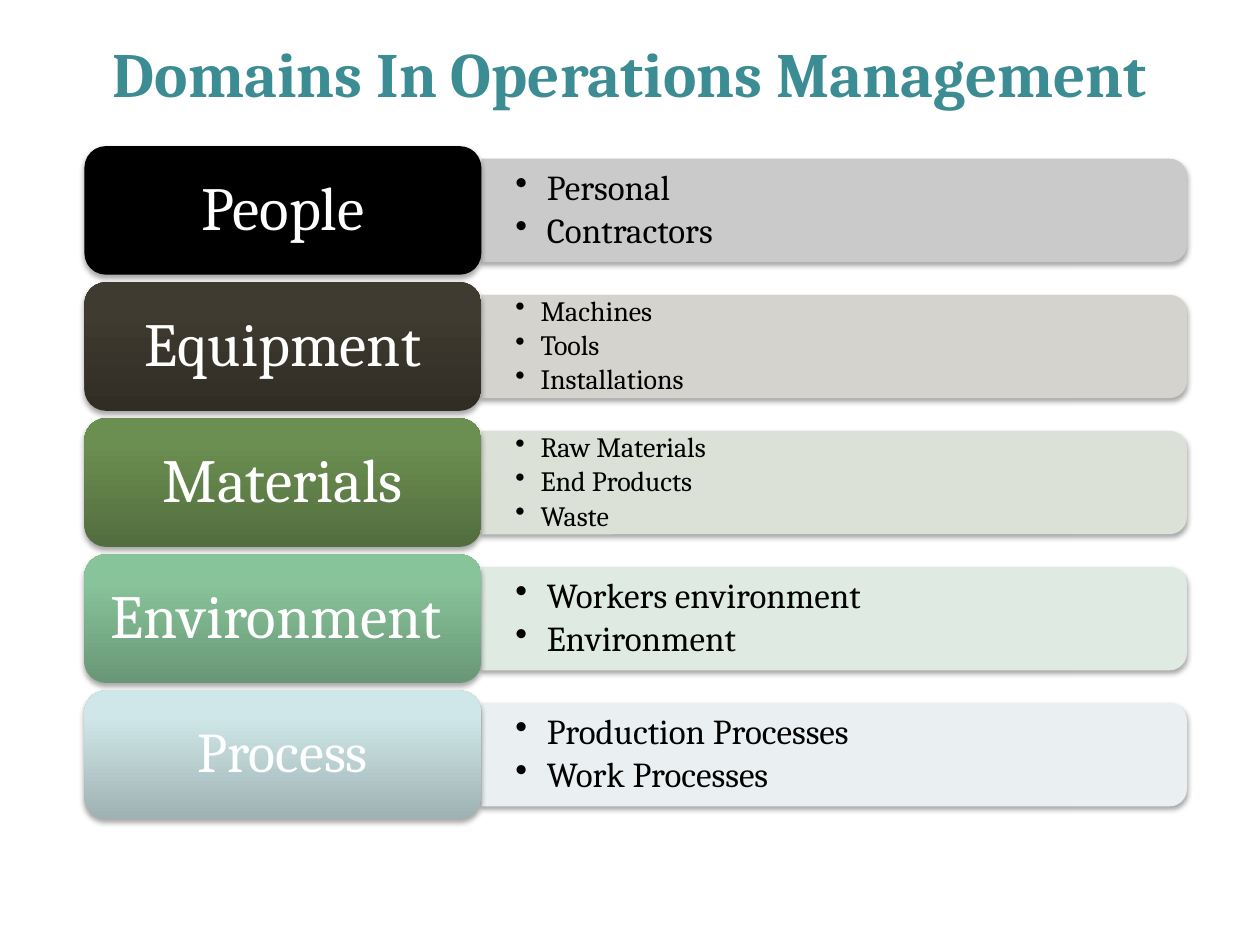
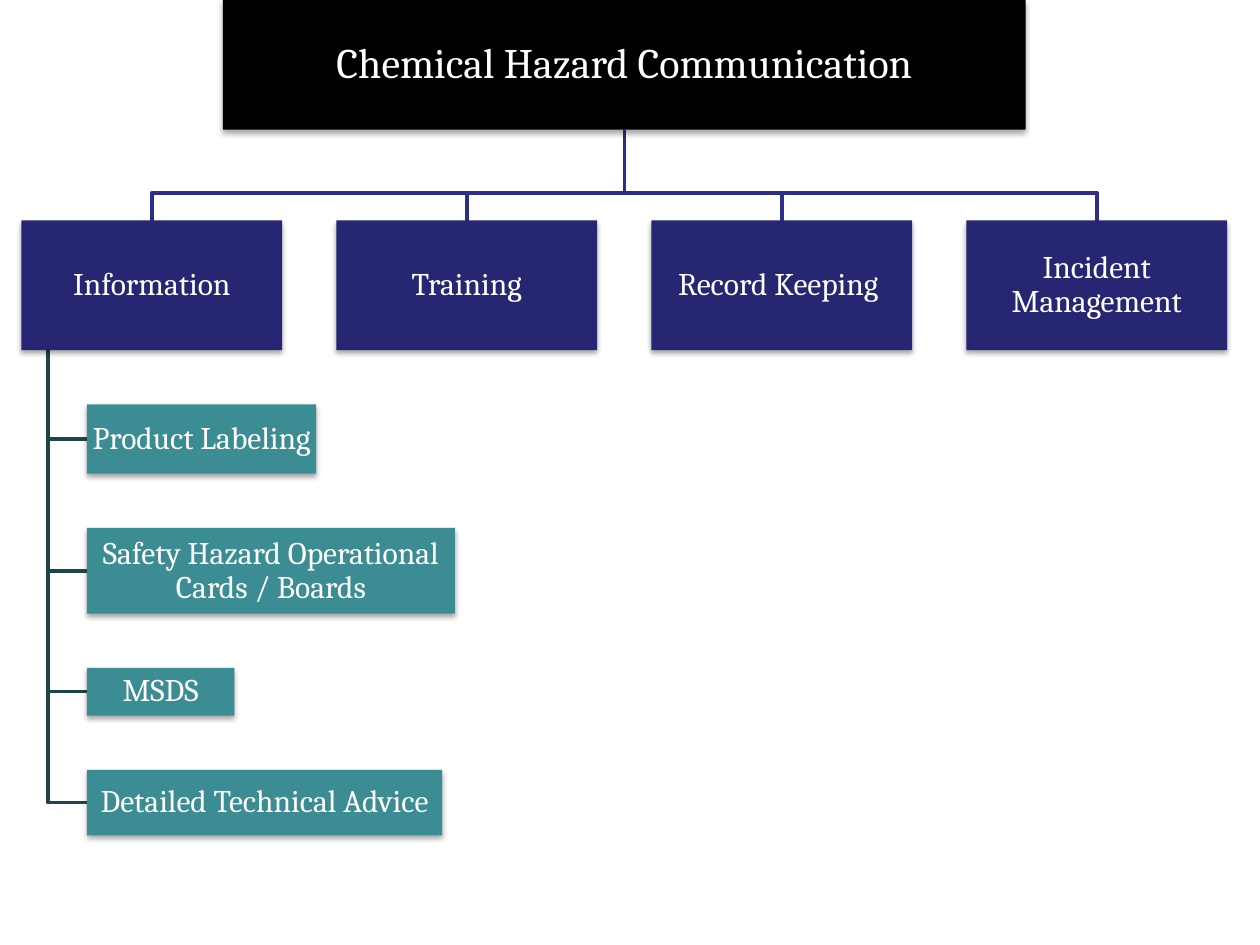
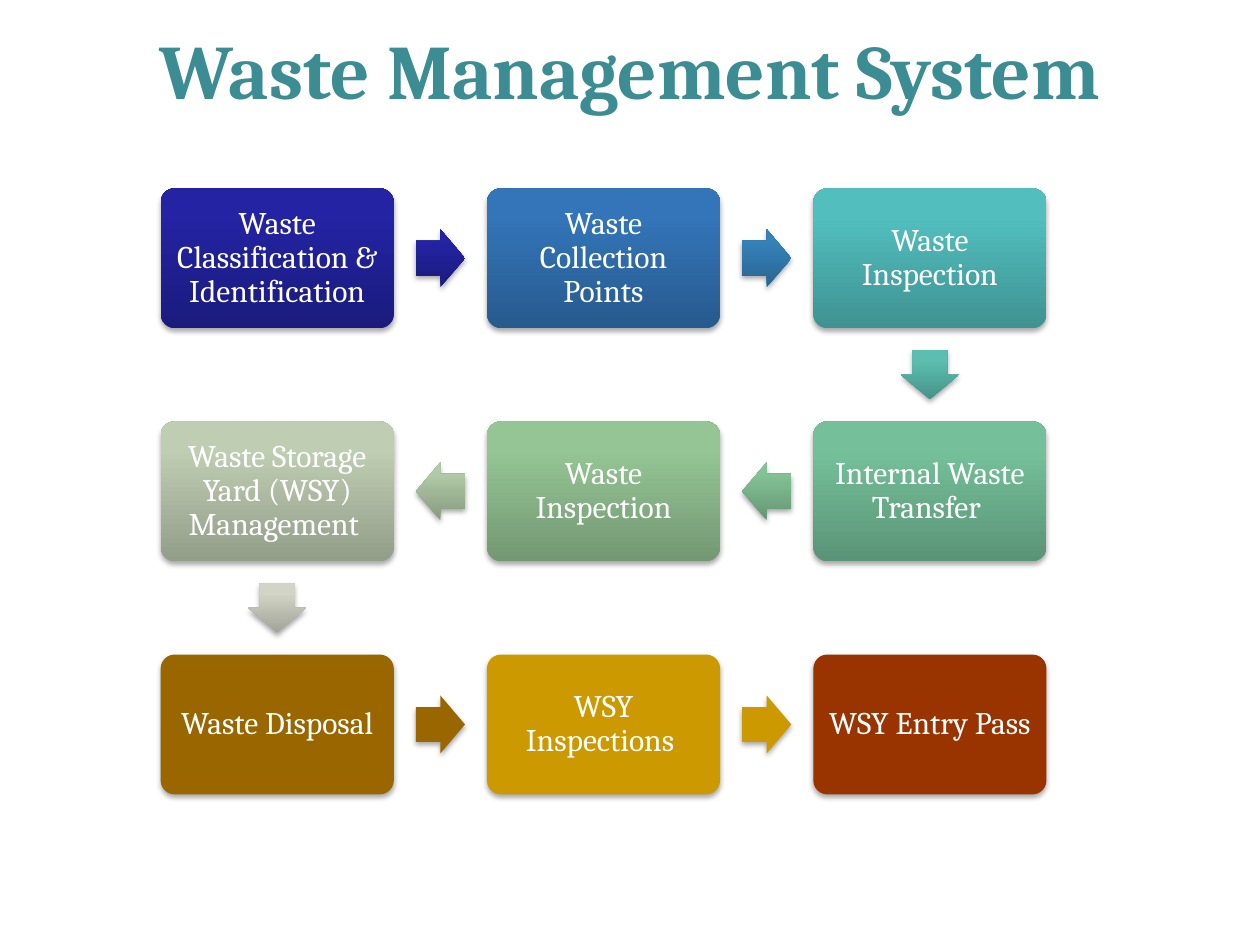
from lxml import etree
from pptx import Presentation
from pptx.dml.color import RGBColor
from pptx.enum.shapes import MSO_SHAPE
from pptx.enum.text import MSO_ANCHOR, PP_ALIGN
from pptx.oxml.ns import qn
from pptx.util import Inches, Pt

RECTANGLE = MSO_SHAPE.RECTANGLE
ROUNDED = MSO_SHAPE.ROUNDED_RECTANGLE
TOP_ROUNDED = MSO_SHAPE.ROUND_2_SAME_RECTANGLE
RIGHT_ARROW = MSO_SHAPE.RIGHT_ARROW
LEFT_ARROW = MSO_SHAPE.LEFT_ARROW
DOWN_ARROW = MSO_SHAPE.DOWN_ARROW
MIDDLE = MSO_ANCHOR.MIDDLE
LEFT, CENTER = PP_ALIGN.LEFT, PP_ALIGN.CENTER

FONT = "Cambria"
LINE_SPACING = 0.9
SHADE = 0.77  # darkness of the lower end of a gradient

COLORS = {
    "title": "3C8C93", "black": "000000", "white": "FFFFFF",
    "equipment": "403B30", "materials": "6B8E51",
    "environment": "88C49A", "process": "CFE7E9",
    "people panel": "CACACA", "equipment panel": "D5D3CE",
    "materials panel": "DBE1D6", "environment panel": "DFEAE2",
    "process panel": "EAF0F1",
    "branch": "262673", "branch line": "2D2D8A",
    "leaf": "3C8C93", "leaf line": "1E4649",
    "classification": "2323A3", "collection": "3375B8",
    "collection arrow": "3582BB", "inspection": "52BEBE",
    "inspection arrow": "5CBEB0", "transfer": "75C09A",
    "transfer arrow": "83C295", "second inspection": "95C595",
    "second inspection arrow": "B0C9A6", "storage": "BFCDB2",
    "storage arrow": "D2D5C5", "disposal": "996600",
    "yard inspections": "CC9900", "entry pass": "993300",
}

# Label, label size, colour, bullet size, bullets
DOMAINS = [
    ("People", 35, "black", 20, ["Personal", "Contractors"]),
    ("Equipment", 35, "equipment", 16, ["Machines", "Tools", "Installations"]),
    ("Materials", 35, "materials", 16, ["Raw Materials", "End Products", "Waste"]),
    ("Environment ", 35, "environment", 20, ["Workers environment", "Environment"]),
    ("Process", 32, "process", 20, ["Production Processes", "Work Processes"]),
]

BRANCHES = ["Information", "Training", "Record Keeping ", "Incident Management"]

# Text, width, height
LEAVES = [
    ("Product Labeling", 1.82, 0.55),
    ("Safety Hazard Operational Cards / Boards", 2.92, 0.68),
    ("MSDS", 1.17, 0.38),
    ("Detailed Technical Advice", 2.82, 0.52),
]

# Text, box colour, colour of the arrow to the next step
WASTE_STEPS = [
    ("Waste Classification & Identification", "classification", "classification"),
    ("Waste Collection Points", "collection", "collection arrow"),
    ("Waste Inspection", "inspection", "inspection arrow"),
    ("Internal Waste Transfer ", "transfer", "transfer arrow"),
    ("Waste Inspection", "second inspection", "second inspection arrow"),
    ("Waste Storage Yard (WSY) Management ", "storage", "storage arrow"),
    ("Waste Disposal", "disposal", "disposal"),
    ("WSY Inspections ", "yard inspections", "yard inspections"),
    ("WSY Entry Pass", "entry pass", None),
]
FLAT_STEPS = {"black", "disposal", "yard inspections", "entry pass"}


def color(name):
    return RGBColor.from_string(COLORS[name])


def paint(shape, name, gradient=False):
    """Fill a shape flat, or from a darker foot up to its colour."""
    if not gradient:
        shape.fill.solid()
        shape.fill.fore_color.rgb = color(name)
        return
    light = color(name)
    shape.fill.gradient()
    shape.fill.gradient_angle = 90
    foot, body = shape.fill.gradient_stops
    foot.position, body.position = 0, 0.8
    foot.color.rgb = RGBColor(*(round(part * SHADE) for part in light))
    body.color.rgb = light


def add_shadow(shape):
    shape.shadow.inherit = False
    effects = shape._element.spPr.find(qn("a:effectLst"))
    shadow = etree.SubElement(
        effects, qn("a:outerShdw"), blurRad=str(Pt(3.1)), dist=str(Pt(1.8)),
        dir="5400000", rotWithShape="0")
    black = etree.SubElement(shadow, qn("a:srgbClr"), val=COLORS["black"])
    etree.SubElement(black, qn("a:alpha"), val="35000")


def set_frame(shape, inset_x, inset_y):
    frame = shape.text_frame
    frame.word_wrap = True
    frame.vertical_anchor = MIDDLE
    frame.margin_left = frame.margin_right = Inches(inset_x)
    frame.margin_top = frame.margin_bottom = Inches(inset_y)
    return frame


def style_paragraph(paragraph, text, size, color_name, align=CENTER):
    paragraph.text = text
    paragraph.alignment = align
    paragraph.font.name = FONT
    paragraph.font.size = Pt(size)
    paragraph.font.color.rgb = color(color_name)


def add_block(slide, kind, left, top, width, height, fill, gradient=False):
    shape = slide.shapes.add_shape(
        kind, Inches(left), Inches(top), Inches(width), Inches(height))
    paint(shape, fill, gradient)
    shape.line.fill.background()
    add_shadow(shape)
    return shape


def add_label(shape, text, size, inset_x, inset_y):
    paragraph = set_frame(shape, inset_x, inset_y).paragraphs[0]
    style_paragraph(paragraph, text, size, "white")
    paragraph.line_spacing = LINE_SPACING


def add_title(slide, text, size, top, height):
    box = slide.shapes.add_textbox(
        Inches(0.75), Inches(top), Inches(8.5), Inches(height))
    paragraph = set_frame(box, 0.1, 0.05).paragraphs[0]
    style_paragraph(paragraph, text, size, "title")
    paragraph.font.bold = True


def add_bullets(slide, left, top, width, height, items, size):
    box = slide.shapes.add_textbox(
        Inches(left), Inches(top), Inches(width), Inches(height))
    frame = set_frame(box, 0.27, 0.14)
    indent = Pt(size * 0.9)
    for index, item in enumerate(items):
        paragraph = frame.add_paragraph() if index else frame.paragraphs[0]
        properties = paragraph._p.get_or_add_pPr()
        properties.set("marL", str(indent))
        properties.set("indent", str(-indent))
        etree.SubElement(properties, qn("a:buChar"), char="•")
        style_paragraph(paragraph, item, size, "black", LEFT)
        paragraph.line_spacing = LINE_SPACING
        if index:
            paragraph.space_before = Pt(size * 0.15)


def add_elbow(slide, points, line_color):
    corners = [(Inches(x), Inches(y)) for x, y in points]
    builder = slide.shapes.build_freeform(*corners[0])
    builder.add_line_segments(corners[1:], close=False)
    line = builder.convert_to_shape()
    line.fill.background()
    line.line.color.rgb = color(line_color)
    line.line.width = Pt(2)
    line.shadow.inherit = False


def build_domains(slide):
    add_title(slide, "Domains In Operations Management", 36, 0.25, 0.65)
    left, width, height, pitch = 0.67, 3.15, 1.02, 1.08
    panel_left, panel_width, panel_height = left + width, 5.6, 0.82
    for row, (name, size, fill, bullet_size, items) in enumerate(DOMAINS):
        top = 1.16 + row * pitch
        middle = top + height / 2
        # Panel: an upright shape turned so that its round corners face right
        panel = add_block(
            slide, TOP_ROUNDED,
            panel_left + (panel_width - panel_height) / 2,
            middle - panel_width / 2, panel_height, panel_width,
            f"{name.strip().lower()} panel")
        panel.rotation = 90
        add_bullets(slide, panel_left, middle - 0.37, 5.56, 0.74,
                    items, bullet_size)
        # Label
        label = add_block(slide, ROUNDED, left, top, width, height, fill,
                          fill not in FLAT_STEPS)
        add_label(label, name, size, 0.15, 0.07)


def build_hazard_tree(slide):
    root_left, root_width, box_height = 1.77, 6.37, 1.03
    root_center = root_left + root_width / 2
    branch_top, branch_width, bus_y = 1.75, 2.07, 1.53
    branch_lefts = [0.17 + 2.5 * index for index in range(len(BRANCHES))]
    branch_bottom = branch_top + box_height
    trunk_x, leaf_left, leaf_gap = 0.38, 0.69, 0.43

    # Leaves, each linked to the trunk below the first branch
    top = branch_bottom + leaf_gap
    for text, width, height in LEAVES:
        middle = top + height / 2
        add_elbow(slide, [(trunk_x, branch_bottom), (trunk_x, middle),
                          (leaf_left, middle)], "leaf line")
        leaf = add_block(slide, RECTANGLE, leaf_left, top, width, height, "leaf")
        add_label(leaf, text, 18, 0.01, 0.01)
        top += height + leaf_gap

    # Branches
    for text, left in zip(BRANCHES, branch_lefts):
        center = left + branch_width / 2
        add_elbow(slide, [(root_center, box_height), (root_center, bus_y),
                          (center, bus_y), (center, branch_top)], "branch line")
        branch = add_block(slide, RECTANGLE, left, branch_top, branch_width,
                           box_height, "branch")
        add_label(branch, text, 18, 0.01, 0.01)

    # Root
    root = add_block(slide, RECTANGLE, root_left, 0, root_width, box_height, "black")
    add_label(root, "Chemical Hazard Communication", 24, 0.02, 0.02)


def step_center(index):
    """Steps run right, then left, then right again, three to a row."""
    row, column = divmod(index, 3)
    if row % 2:
        column = 2 - column
    return 2.2 + column * 2.59, 2.05 + row * 1.85


def add_step_arrow(slide, start, end, fill):
    if start[1] != end[1]:
        kind, width, height = DOWN_ARROW, 0.46, 0.39
    else:
        kind = RIGHT_ARROW if end[0] > start[0] else LEFT_ARROW
        width, height = 0.39, 0.46
    center_x, center_y = (start[0] + end[0]) / 2, (start[1] + end[1]) / 2
    arrow = add_block(slide, kind, center_x - width / 2, center_y - height / 2,
                      width, height, fill, fill not in FLAT_STEPS)
    arrow.adjustments[0] = 0.6
    arrow.adjustments[1] = 0.5


def build_waste_flow(slide):
    add_title(slide, "Waste Management System", 44, 0.17, 0.75)
    width, height = 1.85, 1.11
    for index, (text, fill, arrow_fill) in enumerate(WASTE_STEPS):
        center = step_center(index)
        box = add_block(slide, ROUNDED, center[0] - width / 2,
                        center[1] - height / 2, width, height, fill,
                        fill not in FLAT_STEPS)
        box.adjustments[0] = 0.1
        add_label(box, text, 18, 0.07, 0.07)
        if arrow_fill:
            add_step_arrow(slide, center, step_center(index + 1), arrow_fill)


def main():
    presentation = Presentation()
    presentation.slide_width = Inches(10)
    presentation.slide_height = Inches(7.5)
    blank = presentation.slide_layouts[6]
    for build in (build_domains, build_hazard_tree, build_waste_flow):
        build(presentation.slides.add_slide(blank))
    presentation.save("out.pptx")


if __name__ == "__main__":
    main()
